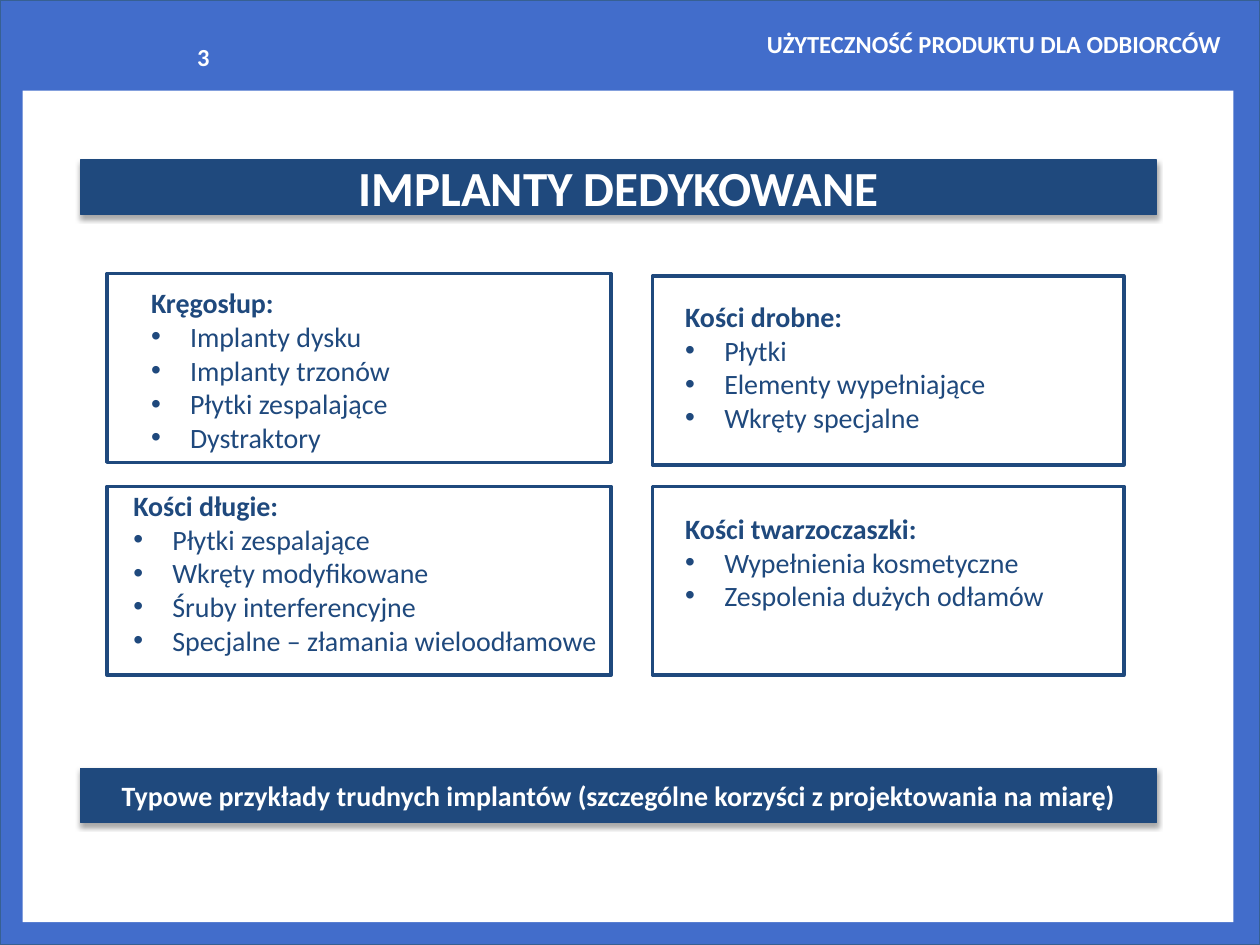
"""Build the slide on custom-made implants."""
from lxml import etree
from pptx import Presentation
from pptx.dml.color import RGBColor
from pptx.enum import shapes, text
from pptx.oxml.ns import qn
from pptx.util import Inches, Pt

WHITE = RGBColor(0xFF, 0xFF, 0xFF)
NAVY = RGBColor(0x1F, 0x49, 0x7D)
BLUE = RGBColor(0x42, 0x6D, 0xCB)
FRAME_EDGE = RGBColor(0x37, 0x60, 0x92)
BANNER_LEFT, BANNER_WIDTH, BANNER_HEIGHT = 0.64, 8.54, 0.43
CARD_HEIGHT = 1.5

CARDS = [
    ("Kości twarzoczaszki:",
     ["Wypełnienia kosmetyczne", "Zespolenia dużych odłamów"],
     (5.18, 3.86, 3.74), (5.34, 4.01, 3.84, 0.91)),
    ("Kości długie:",
     ["Płytki zespalające", "Wkręty modyfikowane", "Śruby interferencyjne",
      "Specjalne – złamania wieloodłamowe"],
     (0.85, 3.86, 4), (0.96, 3.83, 4.11, 1.45)),
    ("Kości drobne:",
     ["Płytki", "Elementy wypełniające", "Wkręty specjalne"],
     (5.18, 2.19, 3.74), (5.34, 2.33, 3.84, 1.18)),
    ("Kręgosłup:",
     ["Implanty dysku", "Implanty trzonów", "Płytki zespalające", "Dystraktory"],
     (0.85, 2.17, 4), (1.1, 2.22, 3.39, 1.48)),
]


def style_font(paragraph, size, color, bold=True):
    """Set the typeface, size, colour and weight of a paragraph."""
    font = paragraph.font
    font.name, font.size, font.bold = "Calibri", Pt(size), bold
    font.color.rgb = color


def add_rectangle(parent, box, fill=None, edge=None, weight=0.75):
    """Add a flat rectangle with an optional fill and outline."""
    rectangle = parent.add_shape(shapes.MSO_SHAPE.RECTANGLE, *map(Inches, box))
    rectangle.shadow.inherit = False
    paint(rectangle, fill, edge, weight)
    return rectangle


def paint(shape, fill, edge, weight):
    """Apply a fill and an outline, or clear them."""
    if fill is None:
        shape.fill.background()
    else:
        shape.fill.solid()
        shape.fill.fore_color.rgb = fill
    if edge is None:
        shape.line.fill.background()
    else:
        shape.line.color.rgb = edge
        shape.line.width = Pt(weight)


def write_line(shape, wording, size, align, anchor=text.MSO_ANCHOR.MIDDLE):
    """Write one bold white line into a shape."""
    frame = shape.text_frame
    frame.word_wrap = True
    frame.auto_size = text.MSO_AUTO_SIZE.NONE
    frame.vertical_anchor = anchor
    line = frame.paragraphs[0]
    line.text, line.alignment = wording, align
    style_font(line, size, WHITE)


def add_label(slide, wording, box, align, anchor):
    """Add a small text in the top band."""
    label = slide.shapes.add_textbox(*map(Inches, box))
    write_line(label, wording, 14, align, anchor)


def format_banner(banner, wording, size):
    """Turn a shape into a navy banner with a soft shadow below it."""
    paint(banner, NAVY, NAVY, 0.75)
    banner.shadow.inherit = False
    effects = banner._element.spPr.find(qn("a:effectLst"))
    shadow = etree.SubElement(effects, qn("a:outerShdw"), blurRad=str(Pt(3.1)),
                              dist=str(Pt(1.8)), dir="5400000", rotWithShape="0")
    color = etree.SubElement(shadow, qn("a:srgbClr"), val="000000")
    etree.SubElement(color, qn("a:alpha"), val="35000")
    write_line(banner, wording, size, text.PP_ALIGN.CENTER)


def add_bullet(paragraph):
    """Give a paragraph a hanging bullet."""
    properties = paragraph._p.get_or_add_pPr()
    properties.set("marL", str(Inches(0.31)))
    properties.set("indent", str(Inches(-0.31)))
    etree.SubElement(properties, qn("a:buFont"), typeface="Arial")
    etree.SubElement(properties, qn("a:buChar"), char="•")


def add_card(slide, heading, items, outline, text_area):
    """Add a grouped card with a heading and a bulleted list."""
    card = slide.shapes.add_group_shape().shapes
    frame = card.add_textbox(*map(Inches, text_area)).text_frame
    frame.word_wrap = True
    frame.paragraphs[0].text = heading
    style_font(frame.paragraphs[0], 16, NAVY)
    for item in items:
        entry = frame.add_paragraph()
        entry.text = item
        add_bullet(entry)
        style_font(entry, 16, NAVY, bold=False)
    add_rectangle(card, (*outline, CARD_HEIGHT), edge=NAVY, weight=2)


def add_backdrop(slide):
    """Place the blue frame and the white panel behind everything."""
    frame = add_rectangle(slide.shapes, (0, 0, 10, 7.5), BLUE, FRAME_EDGE)
    panel = add_rectangle(slide.shapes, (0.18, 0.72, 9.61, 6.6), WHITE)
    for layer in (panel, frame):
        slide.shapes._spTree.insert(2, layer._element)


def main():
    """Assemble and save the slide."""
    presentation = Presentation()
    presentation.slide_width, presentation.slide_height = Inches(10), Inches(7.5)
    slide = presentation.slides.add_slide(presentation.slide_layouts[5])
    add_backdrop(slide)

    title = slide.shapes.title
    title.left, title.top = Inches(BANNER_LEFT), Inches(1.27)
    title.width, title.height = Inches(BANNER_WIDTH), Inches(BANNER_HEIGHT)
    format_banner(title, "IMPLANTY DEDYKOWANE", 28)

    add_label(slide, "UŻYTECZNOŚĆ PRODUKTU DLA ODBIORCÓW", (4.72, 0.18, 5.07, 0.34),
              text.PP_ALIGN.RIGHT, text.MSO_ANCHOR.TOP)
    for card in CARDS:
        add_card(slide, *card)

    summary = add_rectangle(slide.shapes, (BANNER_LEFT, 6.1, BANNER_WIDTH, BANNER_HEIGHT))
    format_banner(summary, "Typowe przykłady trudnych implantów "
                  "(szczególne korzyści z projektowania na miarę)", 16)
    add_label(slide, "3", (1.36, 0.2, 0.51, 0.5),
              text.PP_ALIGN.CENTER, text.MSO_ANCHOR.MIDDLE)
    presentation.save("out.pptx")


if __name__ == "__main__":
    main()
